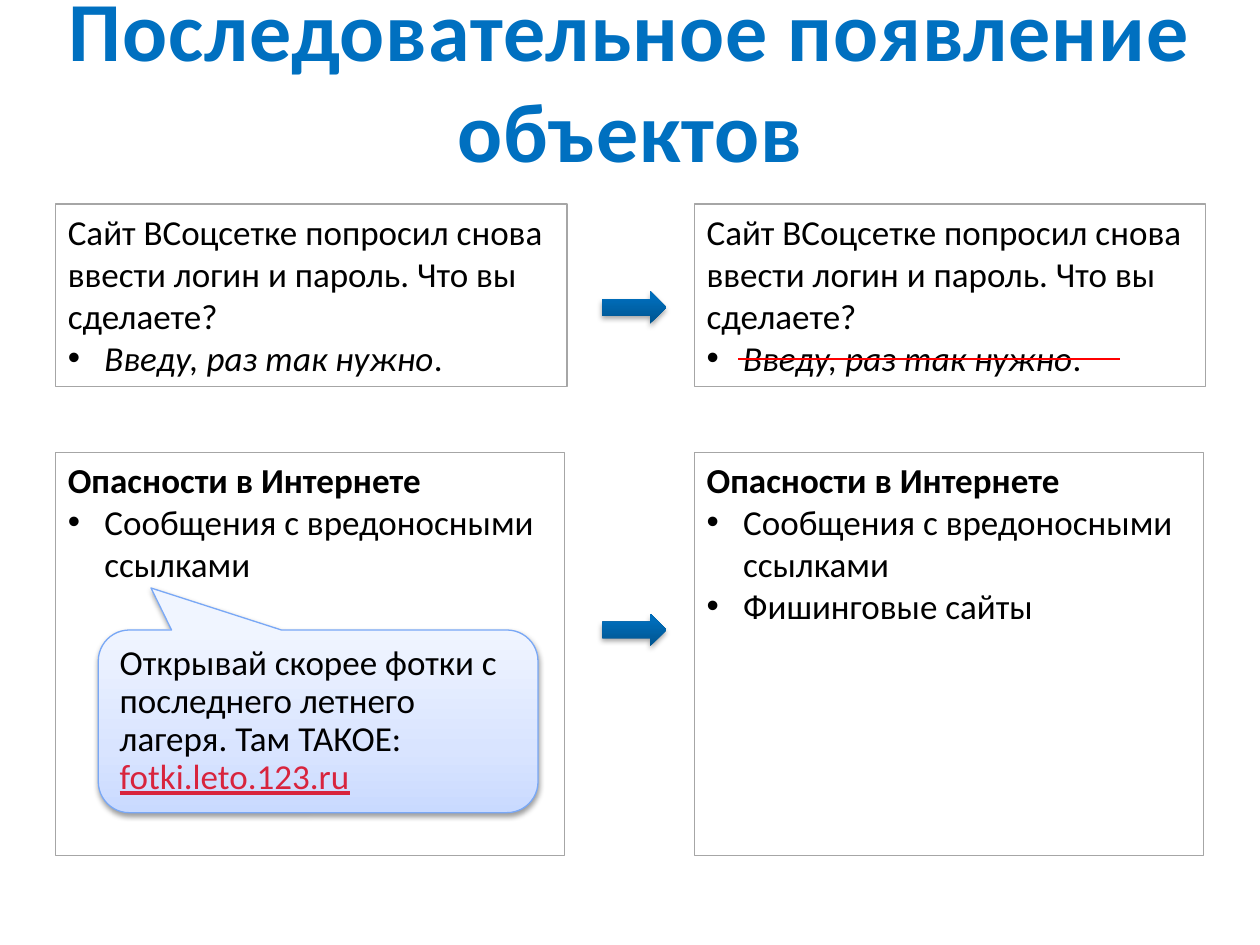
from copy import deepcopy

from lxml import etree
from pptx import Presentation
from pptx import util as u
from pptx.dml import color as dc
from pptx.enum import shapes, text
from pptx.oxml import ns

HUES = {
    "title": "0070C0",
    "text": "000000",
    "frame": "A6A6A6",
    "strike": "FF0000",
    "link": "D8243D",
    "edge": "79A8F6",
}
BLUE = [(0, "00548F"), (0.8, "006DBA"), (1, "006DBB")]
PALE = [(0, "C9DAFF"), (0.35, "D9E4FF"), (1, "F0F5FF")]
LEFT, RIGHT = 0.44, 5.51
ASK = "Сайт ВСоцсетке попросил снова ввести логин и пароль. Что вы сделаете?"
REPLY = "Введу, раз так нужно"
RISK = "Опасности в Интернете"
RISKS = ["Сообщения с вредоносными ссылками", "Фишинговые сайты"]
LURE = "Открывай скорее фотки с последнего летнего лагеря. Там ТАКОЕ:"
LINK = "fotki.leto.123.ru"


def rgb(code):
    return dc.RGBColor.from_string(code)


def node(top, tag, **attrs):
    return etree.SubElement(top, ns.qn(tag), {k: str(v) for k, v in attrs.items()})


def write(para, words, size=20, hue="text", bold=False, slant=False, under=False, gap=0):
    run = para.add_run()
    run.text = words
    font = run.font
    font.name, font.size = "Calibri", u.Pt(size)
    font.bold, font.italic, font.underline = bold, slant, under
    font.color.rgb = rgb(HUES[hue])
    if gap:
        font._element.set("spc", str(gap))


def lines(shape, count, align=text.PP_ALIGN.LEFT, anchor=text.MSO_ANCHOR.TOP):
    frame = shape.text_frame
    frame.word_wrap = True
    frame.vertical_anchor = anchor
    for _ in range(count - 1):
        frame.add_paragraph()
    for para in frame.paragraphs:
        para.alignment = align
    return frame.paragraphs


def dot(para):
    props = para._p.get_or_add_pPr()
    dent = u.Inches(0.29)
    props.set("marL", str(dent))
    props.set("indent", str(-dent))
    node(props, "a:buFont", typeface="Arial")
    node(props, "a:buChar", char="•")


def form(slide, kind, x, y, w, h):
    shape = slide.shapes.add_shape(kind, *map(u.Inches, (x, y, w, h)))
    shape.shadow.inherit = False
    return shape


def edge(shape, hue):
    shape.line.color.rgb = rgb(HUES[hue])
    shape.line.width = u.Pt(0.75)


def blend(shape, stops):
    fill = shape.fill
    fill.gradient()
    fill.gradient_angle = 90
    group = shape._element.spPr.find(".//" + ns.qn("a:gsLst"))
    group.append(deepcopy(group[-1]))
    for stop, (place, code) in zip(fill.gradient_stops, stops):
        stop.position = place
        stop.color.rgb = rgb(code)


def shade(shape, alpha, dist):
    effect = shape._element.spPr.find(ns.qn("a:effectLst"))
    outer = node(effect, "a:outerShdw", blurRad=u.Pt(3.1), dist=u.Pt(dist),
                 dir=90 * 60000, rotWithShape=0)
    tint = node(outer, "a:srgbClr", val="000000")
    node(tint, "a:alpha", val=alpha * 1000)


def panel(slide, x, y, w, h):
    box = form(slide, shapes.MSO_SHAPE.RECTANGLE, x, y, w, h)
    box.fill.background()
    edge(box, "frame")
    return box


def quiz(slide, x):
    head, item = lines(panel(slide, x, 1.62, 4.06, 1.45), 2)
    write(head, ASK)
    dot(item)
    write(item, REPLY, slant=True)
    write(item, ".")


def threat(slide, x, items):
    head, *rest = lines(panel(slide, x, 3.59, 4.04, 3.2), len(items) + 1)
    write(head, RISK, bold=True)
    for para, words in zip(rest, items):
        dot(para)
        write(para, words)


def arrow(slide, y):
    shape = form(slide, shapes.MSO_SHAPE.RIGHT_ARROW, 4.78, y, 0.51, 0.26)
    blend(shape, BLUE)
    shape.line.fill.background()
    shade(shape, 35, 1.8)


def strike(slide, x, y, end):
    line = slide.shapes.add_connector(
        shapes.MSO_CONNECTOR.STRAIGHT, *map(u.Inches, (x, y, end, y)))
    line.line.color.rgb = rgb(HUES["strike"])
    line.line.width = u.Pt(1.5)
    node(line._element.spPr, "a:effectLst")


def bubble(slide):
    shape = form(slide, shapes.MSO_SHAPE.ROUNDED_RECTANGULAR_CALLOUT, 0.78, 5, 3.49, 1.45)
    for i, value in enumerate((-0.38, -0.73, 0.17)):
        shape.adjustments[i] = value
    blend(shape, PALE)
    edge(shape, "edge")
    shade(shape, 38, 1.6)
    lure, link = lines(shape, 2, anchor=text.MSO_ANCHOR.MIDDLE)
    lure.line_spacing = link.line_spacing = 0.9
    write(lure, LURE)
    write(link, LINK, hue="link", under=True)


def title(slide, words):
    box = slide.shapes.add_textbox(*map(u.Inches, (0, 0, 10, 1.25)))
    para, = lines(box, 1, text.PP_ALIGN.CENTER, text.MSO_ANCHOR.MIDDLE)
    write(para, words, size=48, hue="title", bold=True, gap=50)


def main():
    deck = Presentation()
    deck.slide_width, deck.slide_height = u.Inches(10), u.Inches(7.5)
    slide = deck.slides.add_slide(deck.slide_layouts[6])
    for x in (LEFT, RIGHT):
        quiz(slide, x)
    arrow(slide, 2.31)
    strike(slide, 5.86, 2.85, 8.89)
    threat(slide, LEFT, RISKS[:1])
    bubble(slide)
    arrow(slide, 4.87)
    threat(slide, RIGHT, RISKS)
    title(slide, "Последовательное появление объектов")
    deck.save("out.pptx")


if __name__ == "__main__":
    main()
